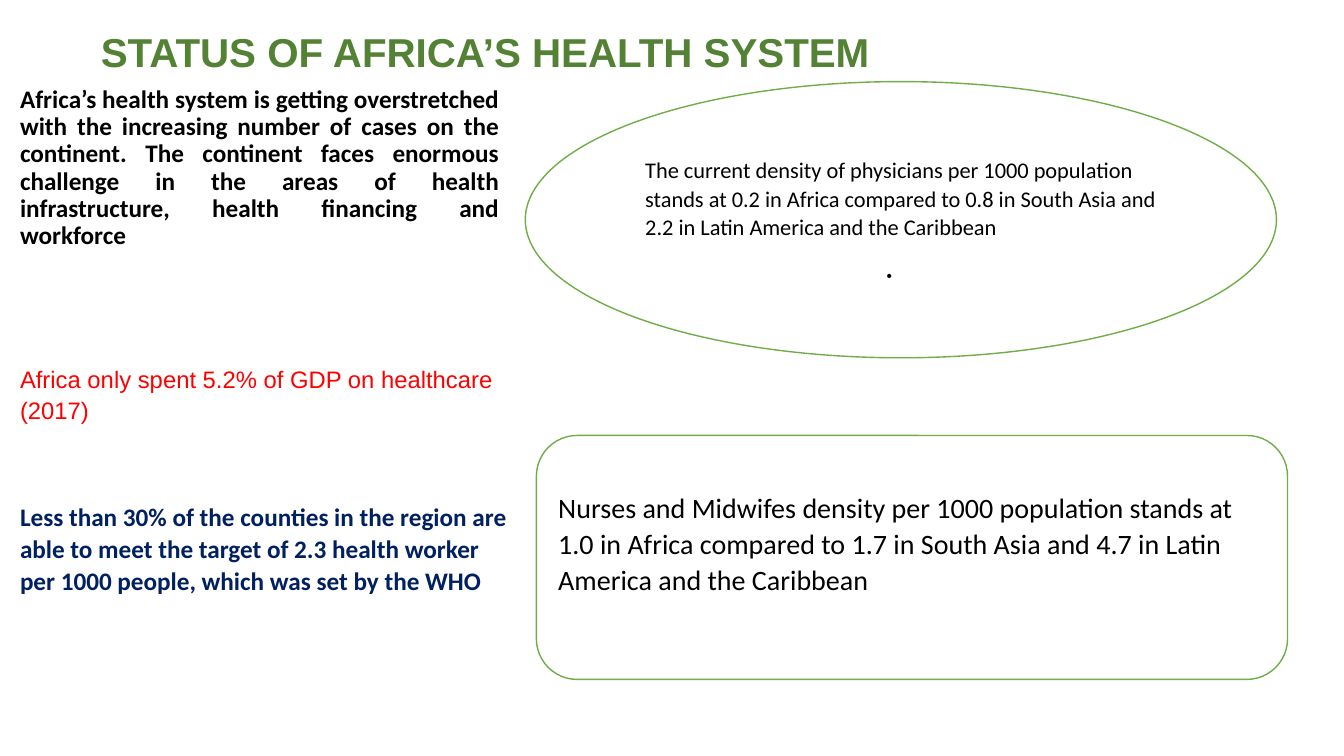
from lxml import etree
from pptx import Presentation
from pptx.dml.color import RGBColor
from pptx.enum.shapes import MSO_SHAPE as Preset
from pptx.enum.text import MSO_ANCHOR as Anchor, PP_ALIGN as Align
from pptx.oxml.ns import qn
from pptx.util import Inches, Pt

COLORS = {
    "title": "548235",
    "text": "000000",
    "spending": "FF0000",
    "target": "002060",
    "outline": "70AD47",
    "panel": "FFFFFF",
}


def color(name):
    return RGBColor.from_string(COLORS[name])


def write(paragraph, text, size=18, font="Calibri", ink="text", bold=False,
          align=Align.LEFT, spacing=1.07, before=0, after=8):
    paragraph.alignment = align
    paragraph.line_spacing = spacing
    paragraph.space_before = Pt(before)
    paragraph.space_after = Pt(after)
    run = paragraph.add_run()
    run.text = text
    run.font.size = Pt(size)
    run.font.name = font
    run.font.bold = bold
    run.font.color.rgb = color(ink)


presentation = Presentation()
presentation.slide_width = Inches(13.33)
presentation.slide_height = Inches(7.5)
slide = presentation.slides.add_slide(presentation.slide_layouts[6])

# Title and the three statements on the left
text_boxes = [
    ((0.67, 0, 8.29, 0.81), Anchor.BOTTOM,
     "STATUS OF AFRICA’S HEALTH SYSTEM",
     dict(size=28.8, font="Arial", ink="title", bold=True,
          align=Align.CENTER, spacing=0.9, after=0)),
    ((0.1, 0.81, 4.95, 5.77), Anchor.TOP,
     "Africa’s health system is getting overstretched with the increasing "
     "number of cases on the continent. The continent faces enormous challenge "
     "in the areas of health infrastructure, health financing and workforce",
     dict(bold=True, align=Align.JUSTIFY, spacing=0.9, before=10, after=0)),
    ((0.1, 3.55, 5.11, 0.71), Anchor.TOP,
     "Africa only spent 5.2% of GDP on healthcare (2017)",
     dict(size=17, font="Arial", ink="spending")),
    ((0.1, 4.9, 5.11, 1.06), Anchor.TOP,
     "Less than 30% of the counties in the region are able to meet the target "
     "of 2.3 health worker per 1000 people, which was set by the WHO",
     dict(ink="target", bold=True)),
]
for box, anchor, text, text_format in text_boxes:
    frame = slide.shapes.add_textbox(*map(Inches, box)).text_frame
    frame.word_wrap = True
    frame.vertical_anchor = anchor
    write(frame.paragraphs[0], text, **text_format)

# Outlined panels with staff densities
panels = [
    (Preset.OVAL, (5.21, 0.81, 7.45, 2.74),
     "The current density of physicians per 1000 population stands at 0.2 in "
     "Africa compared to 0.8 in South Asia and 2.2 in Latin America and the "
     "Caribbean", dict(size=16, before=10)),
    (Preset.ROUNDED_RECTANGLE, (5.32, 4.32, 7.45, 2.42),
     "Nurses and Midwifes density per 1000 population stands at 1.0 in Africa "
     "compared to 1.7 in South Asia and 4.7 in Latin America and the Caribbean",
     dict(size=20)),
]
panel_frames = []
for preset, box, text, text_format in panels:
    panel = slide.shapes.add_shape(preset, *map(Inches, box))
    panel.shadow.inherit = False
    panel.fill.solid()
    panel.fill.fore_color.rgb = color("panel")
    panel.line.color.rgb = color("outline")
    panel.line.width = Pt(1)
    frame = panel.text_frame
    frame.word_wrap = True
    frame.vertical_anchor = Anchor.MIDDLE
    write(frame.paragraphs[0], text, **text_format)
    panel_frames.append(frame)

physicians_frame, nurses_frame = panel_frames
nurses_frame.margin_bottom = Inches(0.36)

# Lone bullet under the physicians text
bullet = physicians_frame.add_paragraph()
write(bullet, chr(160), size=11, align=Align.CENTER, before=10)
properties = bullet._p.get_or_add_pPr()
properties.set("marL", str(Inches(0.25)))
properties.set("indent", str(Inches(-0.25)))
etree.SubElement(properties, qn("a:buFont"), typeface="Arial")
etree.SubElement(properties, qn("a:buChar"), char="•")

presentation.save("out.pptx")
